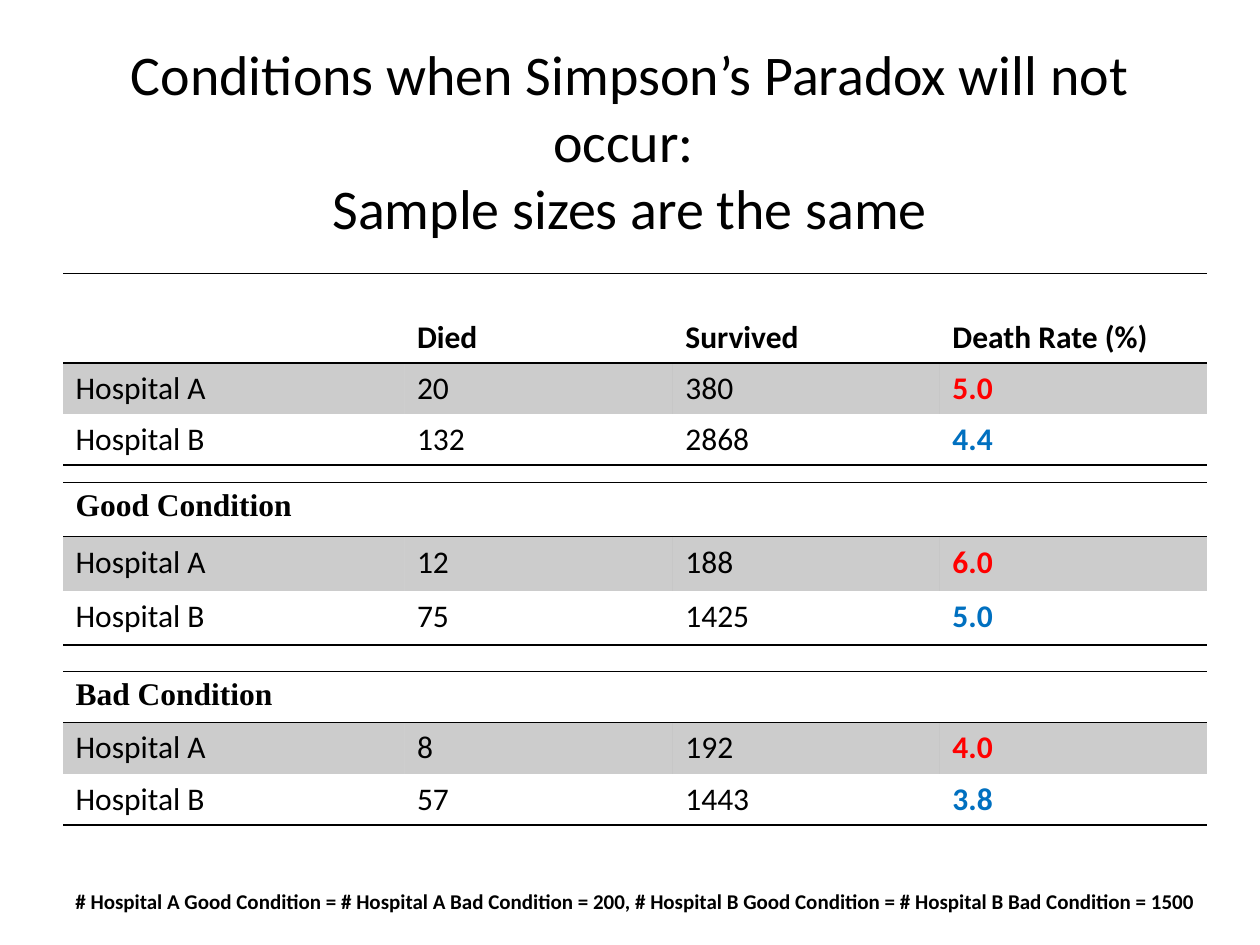
from pptx import Presentation
from pptx.dml.color import RGBColor
from pptx.enum.text import MSO_ANCHOR, MSO_AUTO_SIZE, PP_ALIGN
from pptx.oxml import parse_xml
from pptx.oxml.ns import nsdecls, qn
from pptx.util import Inches, Pt

BLACK = RGBColor(0x00, 0x00, 0x00)
RED = RGBColor(0xFF, 0x00, 0x00)
BLUE = RGBColor(0x00, 0x70, 0xC0)
MIDDLE, BOTTOM, TOP = MSO_ANCHOR.MIDDLE, MSO_ANCHOR.BOTTOM, MSO_ANCHOR.TOP
CENTER, LEFT = PP_ALIGN.CENTER, PP_ALIGN.LEFT
NO_AUTOFIT, GROW = MSO_AUTO_SIZE.NONE, MSO_AUTO_SIZE.SHAPE_TO_FIT_TEXT
PLAIN_TABLE = "{2D5ABB26-0587-4C30-8999-92F81FD0307C}"
TITLE_ONLY = 5

HEADINGS = ["", "Died", "Survived", "Death Rate (%)"]
OVERALL = [["Hospital A", "20", "380", "5.0"], ["Hospital B", "132", "2868", "4.4"]]
GOOD = [["Hospital A", "12", "188", "6.0"], ["Hospital B", "75", "1425", "5.0"]]
BAD = [["Hospital A", "8", "192", "4.0"], ["Hospital B", "57", "1443", "3.8"]]


def write(text_frame, text, size=18, font="Calibri", color=BLACK, bold=False, align=LEFT):
    """Fill a text frame; a vertical tab in the text is a line break."""
    text_frame.text = text
    for paragraph in text_frame.paragraphs:
        paragraph.alignment = align
        for run in paragraph.runs:
            run.font.size = Pt(size)
            run.font.name = font
            run.font.bold = bold
            run.font.color.rgb = color


class SlideBuilder:
    left = 0.5
    column_widths = [2.71, 2.13, 2.12, 2.12]
    rate_colors = [RED, BLUE]

    def __init__(self, slide):
        self.slide = slide

    def title(self, text, top, width, height):
        title = self.slide.shapes.title
        title.left, title.top = Inches(self.left), Inches(top)
        title.width, title.height = Inches(width), Inches(height)
        title.text_frame.auto_size = NO_AUTOFIT
        title.text_frame.vertical_anchor = MIDDLE
        write(title.text_frame, text, size=32, align=CENTER)

    def text(self, text, top, width, height, **style):
        box = self.slide.shapes.add_textbox(
            Inches(self.left), Inches(top), Inches(width), Inches(height))
        box.text_frame.word_wrap = False
        box.text_frame.auto_size = GROW
        write(box.text_frame, text, **style)

    def border(self, cell, side):
        cell._tc.get_or_add_tcPr().append(parse_xml(
            f'<a:{side} {nsdecls("a")} w="12700"><a:solidFill>'
            f'<a:srgbClr val="{BLACK}"/></a:solidFill></a:{side}>'))

    def shade(self, cell):
        cell.fill.solid()
        cell.fill.fore_color.rgb = BLACK
        color = cell._tc.tcPr.find(f'{qn("a:solidFill")}/{qn("a:srgbClr")}')
        color.append(parse_xml(f'<a:alpha {nsdecls("a")} val="20000"/>'))

    def table(self, top, row_heights, headings, records, heading_font="Calibri", anchor=TOP):
        rows = [headings] + records
        table = self.slide.shapes.add_table(
            len(rows), len(headings), Inches(self.left), Inches(top),
            Inches(sum(self.column_widths)), Inches(sum(row_heights))).table
        table.first_row = table.horz_banding = False
        table._tbl.tblPr.find(qn("a:tableStyleId")).text = PLAIN_TABLE
        for column, width in zip(table.columns, self.column_widths):
            column.width = Inches(width)
        for row, height in zip(table.rows, row_heights):
            row.height = Inches(height)

        for i, values in enumerate(rows):
            for j, value in enumerate(values):
                cell = table.cell(i, j)
                if i == 0:
                    write(cell.text_frame, value, font=heading_font, bold=True)
                    cell.vertical_anchor = anchor
                    self.border(cell, "lnT")
                else:
                    is_rate = j == len(values) - 1
                    color = self.rate_colors[i - 1] if is_rate else BLACK
                    write(cell.text_frame, value, color=color, bold=is_rate)
                # Rules close the heading and the last row; the row between is shaded
                if i == 1:
                    self.shade(cell)
                else:
                    self.border(cell, "lnB")


def main():
    presentation = Presentation()
    presentation.slide_width, presentation.slide_height = Inches(10), Inches(7.5)
    slide = presentation.slides.add_slide(presentation.slide_layouts[TITLE_ONLY])
    builder = SlideBuilder(slide)

    # Title
    builder.title("Conditions when Simpson’s Paradox will not occur: \vSample sizes are the same",
                  0.3, 9, 1.62)

    # Overall death rates, then the two condition groups
    builder.table(2.17, [0.71, 0.4, 0.4], HEADINGS, OVERALL, anchor=BOTTOM)
    builder.table(3.83, [0.43] * 3, ["Good Condition", "", "", ""], GOOD, "Times New Roman")
    builder.table(5.33, [0.4] * 3, ["Bad Condition", "", "", ""], BAD, "Times New Roman")

    # Sample size note
    builder.text("# Hospital A Good Condition = # Hospital A Bad Condition = 200, "
                 "# Hospital B Good Condition = # Hospital B Bad Condition = 1500",
                 7, 9.28, 0.3, size=12, bold=True)

    presentation.save("out.pptx")


if __name__ == "__main__":
    main()
